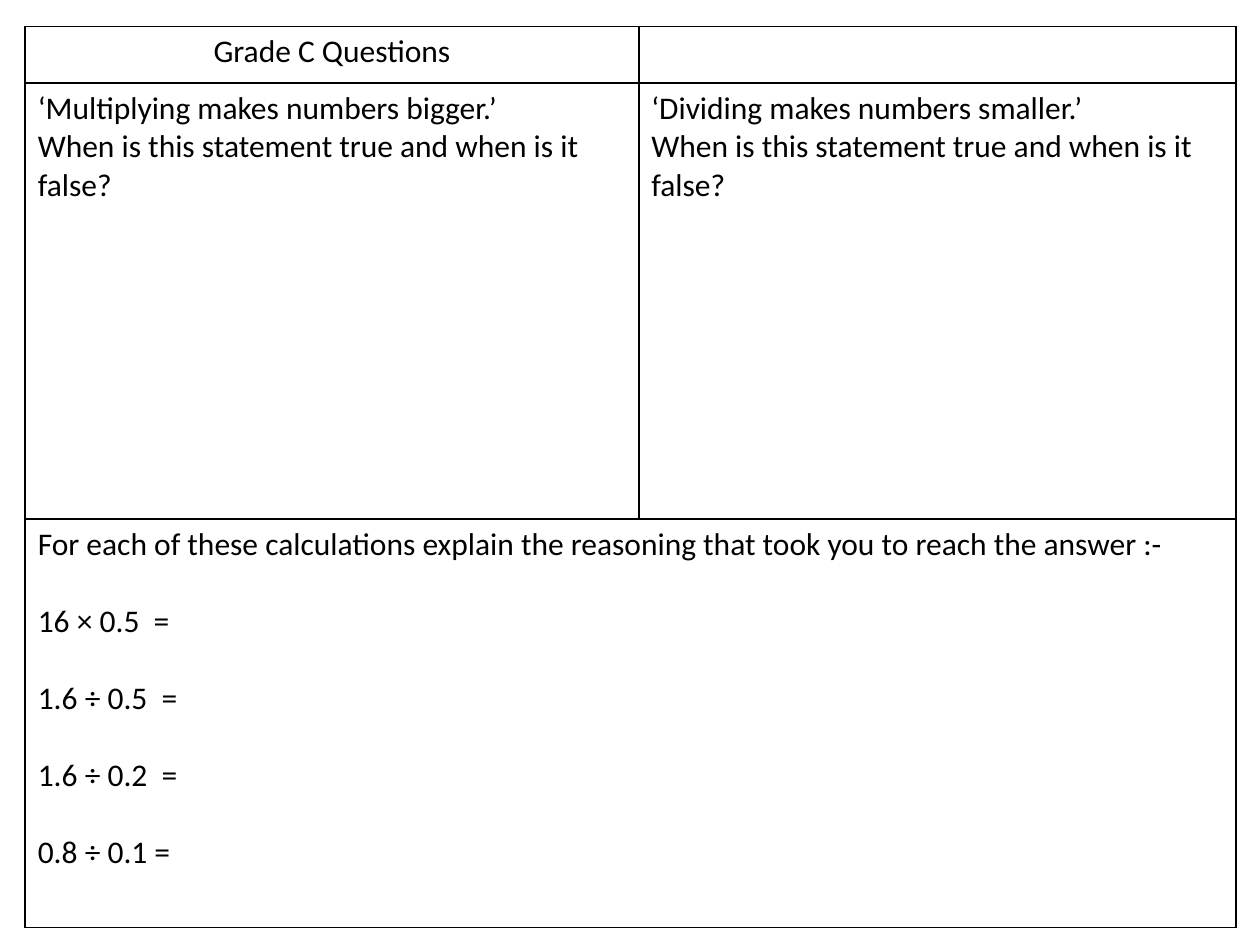
from dataclasses import dataclass

import pptx
import pptx.dml.color
import pptx.enum.text
import pptx.oxml
import pptx.oxml.ns
import pptx.util

Inches = pptx.util.Inches
Pt = pptx.util.Pt
Align = pptx.enum.text.PP_ALIGN

BLACK = pptx.dml.color.RGBColor(0x00, 0x00, 0x00)
FONT_NAME = "Calibri"
FONT_SIZE = Pt(18)
LINE_GAP = Pt(22)
COLUMN_WIDTHS = [4.87, 4.74]
ROW_HEIGHTS = [0.45, 3.46, 3.24]


@dataclass(frozen=True)
class Question:
    row: int
    column: int
    lines: tuple[str, ...]
    align: Align = Align.LEFT
    gap: pptx.util.Length = Pt(0)


PROMPT = "When is this statement true and when is it false?"
QUESTIONS = [
    Question(0, 0, ("Grade C Questions",), align=Align.CENTER),
    Question(1, 0, ("‘Multiplying makes numbers bigger.’", PROMPT)),
    Question(1, 1, ("‘Dividing makes numbers smaller.’", PROMPT)),
    Question(
        2,
        0,
        (
            "For each of these calculations explain the reasoning that took you to reach the answer :-",
            "16 × 0.5  =",
            "1.6 ÷ 0.5  =",
            "1.6 ÷ 0.2  =",
            "0.8 ÷ 0.1 =",
        ),
        gap=LINE_GAP,
    ),
]


def style_cell(cell: pptx.table._Cell) -> None:
    properties = cell._tc.get_or_add_tcPr()
    namespace = pptx.oxml.ns.nsdecls("a")
    for side in ("lnL", "lnR", "lnT", "lnB"):
        properties.append(
            pptx.oxml.parse_xml(
                f'<a:{side} {namespace} w="{Pt(1)}"><a:solidFill>'
                f'<a:srgbClr val="{BLACK}"/></a:solidFill></a:{side}>'
            )
        )
    cell.fill.background()


def write_question(table: pptx.table.Table, question: Question) -> None:
    frame = table.cell(question.row, question.column).text_frame
    for index, line in enumerate(question.lines):
        para = frame.add_paragraph() if index else frame.paragraphs[0]
        para.alignment = question.align
        para.space_before = question.gap if index else Pt(0)
        span = para.add_run()
        span.text = line
        span.font.name = FONT_NAME
        span.font.size = FONT_SIZE
        span.font.color.rgb = BLACK


def add_question_table(page: pptx.slide.Slide) -> None:
    table = page.shapes.add_table(
        len(ROW_HEIGHTS),
        len(COLUMN_WIDTHS),
        Inches(0.2),
        Inches(0.21),
        Inches(sum(COLUMN_WIDTHS)),
        Inches(sum(ROW_HEIGHTS)),
    ).table
    table.first_row = False
    table.horz_banding = False
    for column, width in zip(table.columns, COLUMN_WIDTHS):
        column.width = Inches(width)
    for row, height in zip(table.rows, ROW_HEIGHTS):
        row.height = Inches(height)
    for cell in table.iter_cells():
        style_cell(cell)
    table.cell(2, 0).merge(table.cell(2, 1))
    for question in QUESTIONS:
        write_question(table, question)


def main() -> None:
    deck = pptx.Presentation()
    deck.slide_width = Inches(10)
    deck.slide_height = Inches(7.5)
    page = deck.slides.add_slide(deck.slide_layouts[6])
    add_question_table(page)
    deck.save("out.pptx")


if __name__ == "__main__":
    main()
